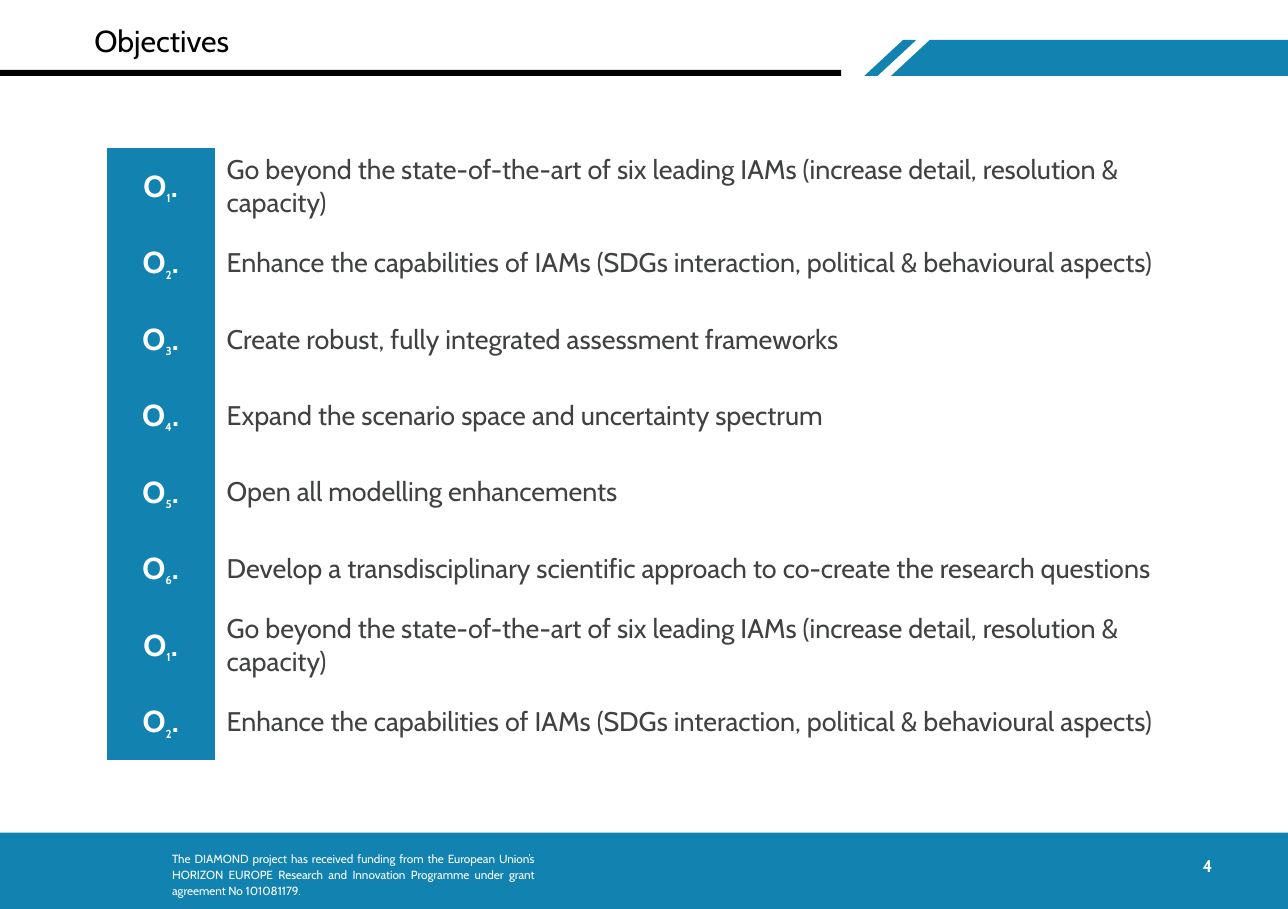
"""Build the objectives slide with its header stripes, table and footer."""
from dataclasses import dataclass
from typing import Any

from pptx import Presentation
from pptx import util as u
from pptx.dml.color import RGBColor
from pptx.enum import shapes, text

WIDTH, HEIGHT = u.Pt(765), u.Pt(540)
BLUE, BLACK, WHITE, GREY = "1283B1", "000000", "FFFFFF", "404141"
FONT = "Cabin"
PLAIN_TABLE_STYLE = "{2D5ABB26-0587-4C30-8999-92F81FD0307C}"
TABLE_LEFT, TABLE_TOP, ROW_HEIGHT = 8.28, 16.27, 8.4
COLUMN_WIDTHS = (8.38, 75.01)
STRIPE_TOP, STRIPE_BOTTOM = 4.4, 8.36


@dataclass(frozen=True)
class Box:
    left: float
    top: float
    width: float
    height: float


@dataclass(frozen=True)
class Label:
    box: Box
    words: str
    size: float
    color: str
    bold: bool = False
    inset: float = 0.05
    paragraph_format: dict[str, Any] | None = None
    anchor: text.MSO_ANCHOR = text.MSO_ANCHOR.TOP


@dataclass(frozen=True)
class Objective:
    number: int
    words: str


BARS = [
    (Box(0, 7.69, 65.32, 0.67), BLACK),
    (Box(0, 91.6, 100, 8.4), BLUE),
]

STRIPES = [
    [(67.11, STRIPE_BOTTOM), (70.12, STRIPE_TOP), (71.15, STRIPE_TOP), (68.14, STRIPE_BOTTOM)],
    [(69.18, STRIPE_BOTTOM), (72.19, STRIPE_TOP), (100, STRIPE_TOP), (100, STRIPE_BOTTOM)],
]

LABELS = [
    Label(Box(6.4, 1.73, 74.35, 6.4), "Objectives", 18, BLACK, inset=0.1),
    Label(
        Box(12.89, 92.8, 29.08, 6.67),
        "The DIAMOND project has received funding from the European Union’s HORIZON EUROPE "
        "Research and Innovation Programme under grant agreement No 101081179.",
        7,
        WHITE,
        paragraph_format={"alignment": text.PP_ALIGN.JUSTIFY, "line_spacing": 1.15},
    ),
    Label(
        Box(91.86, 93.47, 2.73, 3.6),
        "4",
        10,
        WHITE,
        bold=True,
        paragraph_format={"alignment": text.PP_ALIGN.RIGHT},
        anchor=text.MSO_ANCHOR.MIDDLE,
    ),
]

OBJECTIVES = [
    Objective(1, "Go beyond the state-of-the-art of six leading IAMs (increase detail, resolution & capacity)"),
    Objective(2, "Enhance the capabilities of IAMs (SDGs interaction, political & behavioural aspects)"),
    Objective(3, "Create robust, fully integrated assessment frameworks"),
    Objective(4, "Expand the scenario space and uncertainty spectrum"),
    Objective(5, "Open all modelling enhancements"),
    Objective(6, "Develop a transdisciplinary scientific approach to co-create the research questions"),
]
ROWS = OBJECTIVES + OBJECTIVES[:2]


def across(percent: float) -> u.Emu:
    return u.Emu(round(WIDTH * percent / 100))


def down(percent: float) -> u.Emu:
    return u.Emu(round(HEIGHT * percent / 100))


def place(box: Box) -> tuple[u.Emu, u.Emu, u.Emu, u.Emu]:
    return across(box.left), down(box.top), across(box.width), down(box.height)


def apply(target: Any, values: dict[str, Any]) -> None:
    for name, value in values.items():
        setattr(target, name, value)


def paint(fill: Any, color: str) -> None:
    fill.solid()
    fill.fore_color.rgb = RGBColor.from_string(color)


def finish(shape: Any, color: str) -> None:
    paint(shape.fill, color)
    shape.line.fill.background()
    shape.shadow.inherit = False


def add_run(paragraph: Any, words: str, size: float, color: str, bold: bool = False) -> Any:
    run = paragraph.add_run()
    run.text = words
    apply(run.font, {"name": FONT, "size": u.Pt(size), "bold": bold})
    run.font.color.rgb = RGBColor.from_string(color)
    return run


def add_bar(slide: Any, box: Box, color: str) -> None:
    finish(slide.shapes.add_shape(shapes.MSO_SHAPE.RECTANGLE, *place(box)), color)


def add_stripe(slide: Any, corners: list[tuple[float, float]]) -> None:
    points = [(across(x), down(y)) for x, y in corners]
    builder = slide.shapes.build_freeform(*points[0])
    builder.add_line_segments(points[1:], close=True)
    finish(builder.convert_to_shape(), BLUE)


def add_label(slide: Any, label: Label) -> None:
    frame = slide.shapes.add_textbox(*place(label.box)).text_frame
    inset = u.Inches(label.inset)
    apply(frame, {
        "word_wrap": True,
        "vertical_anchor": label.anchor,
        "margin_left": inset,
        "margin_right": inset,
        "margin_top": u.Inches(0.05),
        "margin_bottom": u.Inches(0.05),
    })
    paragraph = frame.paragraphs[0]
    apply(paragraph, label.paragraph_format or {})
    add_run(paragraph, label.words, label.size, label.color, label.bold)


def fill_row(number_cell: Any, words_cell: Any, objective: Objective) -> None:
    for cell in (number_cell, words_cell):
        cell.vertical_anchor = text.MSO_ANCHOR.MIDDLE
    paint(number_cell.fill, BLUE)
    words_cell.fill.background()
    paragraph = number_cell.text_frame.paragraphs[0]
    paragraph.alignment = text.PP_ALIGN.CENTER
    add_run(paragraph, "O", 18, WHITE, bold=True)
    subscript = add_run(paragraph, str(objective.number), 12, WHITE, bold=True)
    subscript.font._element.set("baseline", "-25000")
    add_run(paragraph, ".", 18, WHITE, bold=True)
    add_run(words_cell.text_frame.paragraphs[0], objective.words, 16, GREY)


def add_objectives(slide: Any, objectives: list[Objective]) -> None:
    box = Box(TABLE_LEFT, TABLE_TOP, sum(COLUMN_WIDTHS), ROW_HEIGHT * len(objectives))
    table = slide.shapes.add_table(len(objectives), len(COLUMN_WIDTHS), *place(box)).table
    apply(table, {"first_row": False, "horz_banding": False})
    table._tbl.tblPr[0].text = PLAIN_TABLE_STYLE
    for column, width in zip(table.columns, COLUMN_WIDTHS):
        column.width = across(width)
    for row, objective in zip(table.rows, objectives):
        row.height = down(ROW_HEIGHT)
        fill_row(row.cells[0], row.cells[1], objective)


def main() -> None:
    presentation = Presentation()
    apply(presentation, {"slide_width": WIDTH, "slide_height": HEIGHT})
    slide = presentation.slides.add_slide(presentation.slide_layouts[6])
    for corners in STRIPES:
        add_stripe(slide, corners)
    for box, color in BARS:
        add_bar(slide, box, color)
    add_objectives(slide, ROWS)
    for label in LABELS:
        add_label(slide, label)
    presentation.save("out.pptx")


if __name__ == "__main__":
    main()
